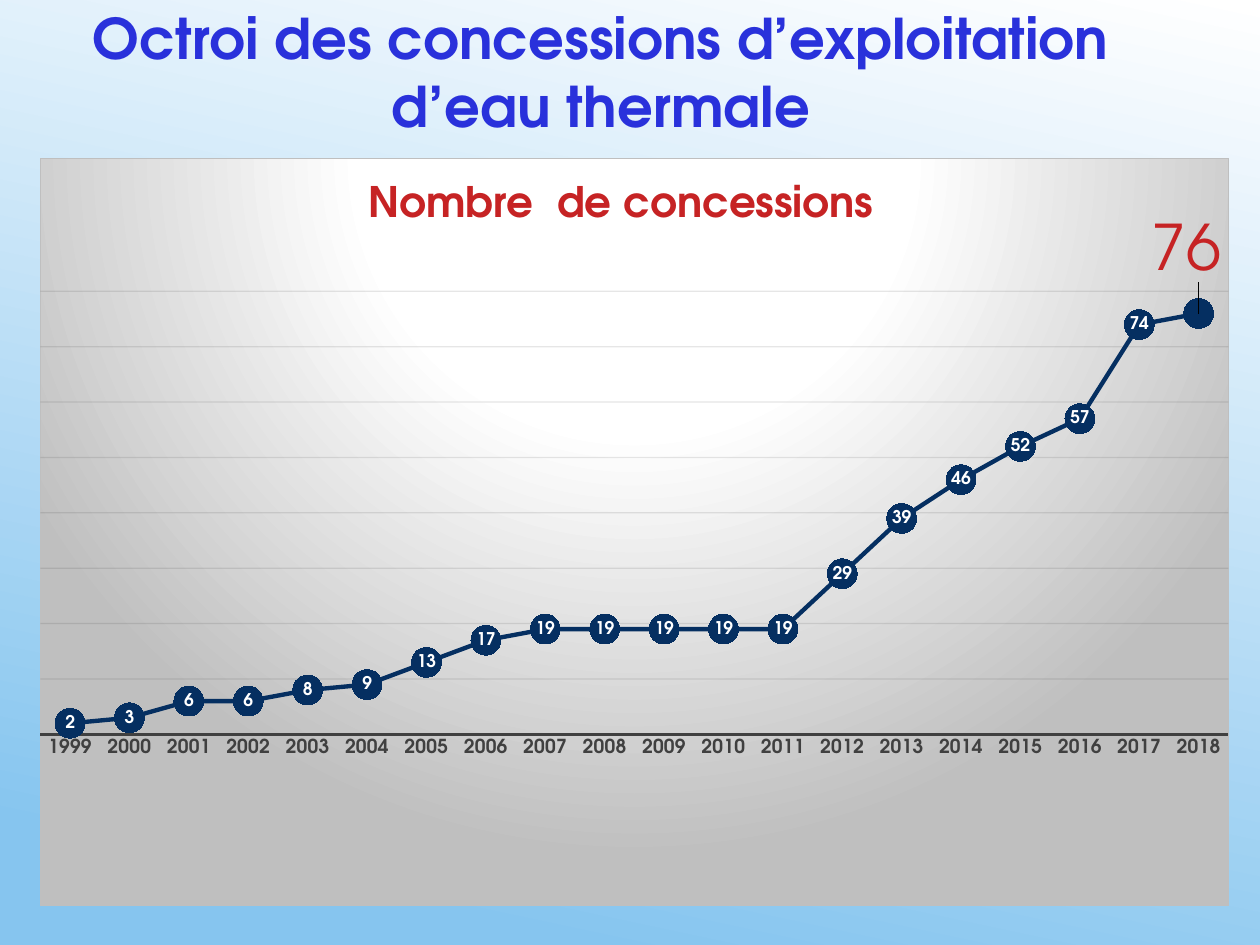
from lxml.etree import SubElement, fromstring
from pptx import Presentation
from pptx.chart.data import CategoryChartData
from pptx.dml.color import RGBColor
from pptx.enum.chart import XL_CHART_TYPE, XL_LABEL_POSITION, XL_MARKER_STYLE, XL_TICK_MARK
from pptx.enum.text import MSO_ANCHOR, PP_ALIGN
from pptx.oxml.ns import nsdecls, qn
from pptx.util import Inches, Pt

WHITE = RGBColor(0xFF, 0xFF, 0xFF)
SKY = RGBColor(0x86, 0xC5, 0xEF)
BLUE = RGBColor(0x29, 0x31, 0xDB)
RED = RGBColor(0xC6, 0x23, 0x24)
NAVY = RGBColor(0x05, 0x2F, 0x61)
SILVER = RGBColor(0xBF, 0xBF, 0xBF)
GRAY = RGBColor(0x40, 0x40, 0x40)
INK = RGBColor(0x0D, 0x0D, 0x0D)
BLACK = RGBColor(0, 0, 0)

YEARS = [str(year) for year in range(1999, 2019)]
CONCESSIONS = [2, 3, 6, 6, 8, 9, 13, 17, 19, 19, 19, 19, 19, 29, 39, 46, 52, 57, 74, 76]


class SlideBuilder:
    font_name = "TeX Gyre Adventor"

    def __init__(self, presentation):
        self.width = presentation.slide_width
        self.height = presentation.slide_height
        self.slide = presentation.slides.add_slide(presentation.slide_layouts[6])

    def box(self, left, top, width, height):
        return (int(left * self.width), int(top * self.height),
                int(width * self.width), int(height * self.height))

    def style_font(self, font, size, color, bold=False):
        formats = {"name": self.font_name, "size": Pt(size), "bold": bold}
        for name, value in formats.items():
            setattr(font, name, value)
        font.color.rgb = color

    def style_line(self, line, color, width):
        line.color.rgb = color
        line.width = Pt(width)

    def background(self, stops, angle):
        fill = self.slide.background.fill
        fill.gradient()
        fill.gradient_angle = 360 - angle
        for stop, (position, color) in zip(fill.gradient_stops, stops):
            stop.position = position
            stop.color.rgb = color

    def heading(self, text, share, size, color):
        frame = self.slide.shapes.add_textbox(*self.box(*share)).text_frame
        frame.word_wrap = True
        frame.vertical_anchor = MSO_ANCHOR.BOTTOM
        paragraph = frame.paragraphs[0]
        paragraph.alignment = PP_ALIGN.CENTER
        run = paragraph.add_run()
        run.text = text
        self.style_font(run.font, size, color, True)

    def place(self, element, index, **settings):
        for layout in element.findall(qn("c:layout")):
            element.remove(layout)
        layout = fromstring(f"<c:layout {nsdecls('c')}/>")
        manual = SubElement(layout, qn("c:manualLayout"))
        for name, value in settings.items():
            SubElement(manual, qn(f"c:{name}")).set("val", str(value))
        element.insert(index, layout)

    def line_chart(self, share, categories, name, values):
        data = CategoryChartData()
        data.categories = categories
        data.add_series(name, values)
        chart = self.slide.shapes.add_chart(
            XL_CHART_TYPE.LINE_MARKERS, *self.box(*share), data).chart
        chart.has_legend = False
        self.style_font(chart.font, 10, BLACK)
        plot_area = chart.plots[0]._element.getparent()
        self.place(plot_area, 0, layoutTarget="inner", xMode="edge", yMode="edge",
                   x=0, y=0.178, w=1, h=0.593)
        return chart

    def chart_panel(self, chart):
        stops = "".join(
            f'<a:gs pos="{position * 1000}"><a:srgbClr val="{color}"/></a:gs>'
            for position, color in ((0, WHITE), (39, WHITE), (100, SILVER)))
        panel = fromstring(
            f'<c:spPr {nsdecls("c", "a")}><a:gradFill><a:gsLst>{stops}</a:gsLst>'
            '<a:path path="circle"><a:fillToRect l="50000" t="-80000" r="50000" b="180000"/>'
            f'</a:path></a:gradFill><a:ln w="{Pt(0.75)}"><a:solidFill>'
            f'<a:srgbClr val="{SILVER}"/></a:solidFill></a:ln></c:spPr>')
        chart._chartSpace.find(qn("c:chart")).addnext(panel)

    def chart_title(self, chart, text, x, y):
        title = chart.chart_title
        run = title.text_frame.paragraphs[0].add_run()
        run.text = text
        self.style_font(run.font, 24, RED, True)
        self.place(title._element, 1, xMode="edge", yMode="edge", x=x, y=y)

    def axes(self, chart, maximum, step):
        category_axis = chart.category_axis
        category_axis.major_tick_mark = XL_TICK_MARK.NONE
        self.style_font(category_axis.tick_labels.font, 11, GRAY, True)
        self.style_line(category_axis.format.line, GRAY, 1.5)
        value_axis = chart.value_axis
        formats = {"visible": False, "minimum_scale": 0, "maximum_scale": maximum,
                   "major_unit": step, "has_major_gridlines": True}
        for name, value in formats.items():
            setattr(value_axis, name, value)
        gridlines = value_axis.major_gridlines
        self.style_line(gridlines.format.line, INK, 0.75)
        for color in gridlines._xAx.find(qn("c:majorGridlines")).iter(qn("a:srgbClr")):
            SubElement(color, qn("a:alpha")).set("val", "10000")

    def series(self, chart):
        chart.plots[0].vary_by_categories = False
        series = chart.plots[0].series[0]
        series.smooth = False
        self.style_line(series.format.line, NAVY, 2.5)
        marker = series.marker
        marker.style = XL_MARKER_STYLE.CIRCLE
        marker.size = 17
        marker.format.fill.solid()
        marker.format.fill.fore_color.rgb = NAVY
        marker.format.line.fill.background()
        labels = series.data_labels
        labels.show_value = True
        labels.position = XL_LABEL_POSITION.CENTER
        self.style_font(labels.font, 10, WHITE, True)
        return series

    def point_label(self, series, index, text, x, y):
        label = series.points[index].data_label
        run = label.text_frame.paragraphs[0].add_run()
        run.text = text
        self.style_font(run.font, 36, RED)
        label.position = XL_LABEL_POSITION.CENTER
        for element in series.data_labels._element.findall(qn("c:dLbl")):
            self.place(element, 1, x=x, y=y)


def main():
    presentation = Presentation()
    presentation.slide_width = Inches(10)
    presentation.slide_height = Inches(7.5)
    builder = SlideBuilder(presentation)
    builder.background(((0, WHITE), (0.9, SKY)), 102)
    builder.heading("Octroi des concessions d’exploitation d’eau thermale",
                    (0.028, 0, 0.898, 0.153), 32, BLUE)
    chart = builder.line_chart((0.031, 0.167, 0.945, 0.792), YEARS, "Series 1", CONCESSIONS)
    builder.chart_panel(chart)
    builder.chart_title(chart, " Nombre  de concessions", 0.26, 0.02)
    builder.axes(chart, 80, 10)
    series = builder.series(chart)
    builder.point_label(series, len(YEARS) - 1, "76", -0.01, -0.08)
    presentation.save("out.pptx")


if __name__ == "__main__":
    main()
